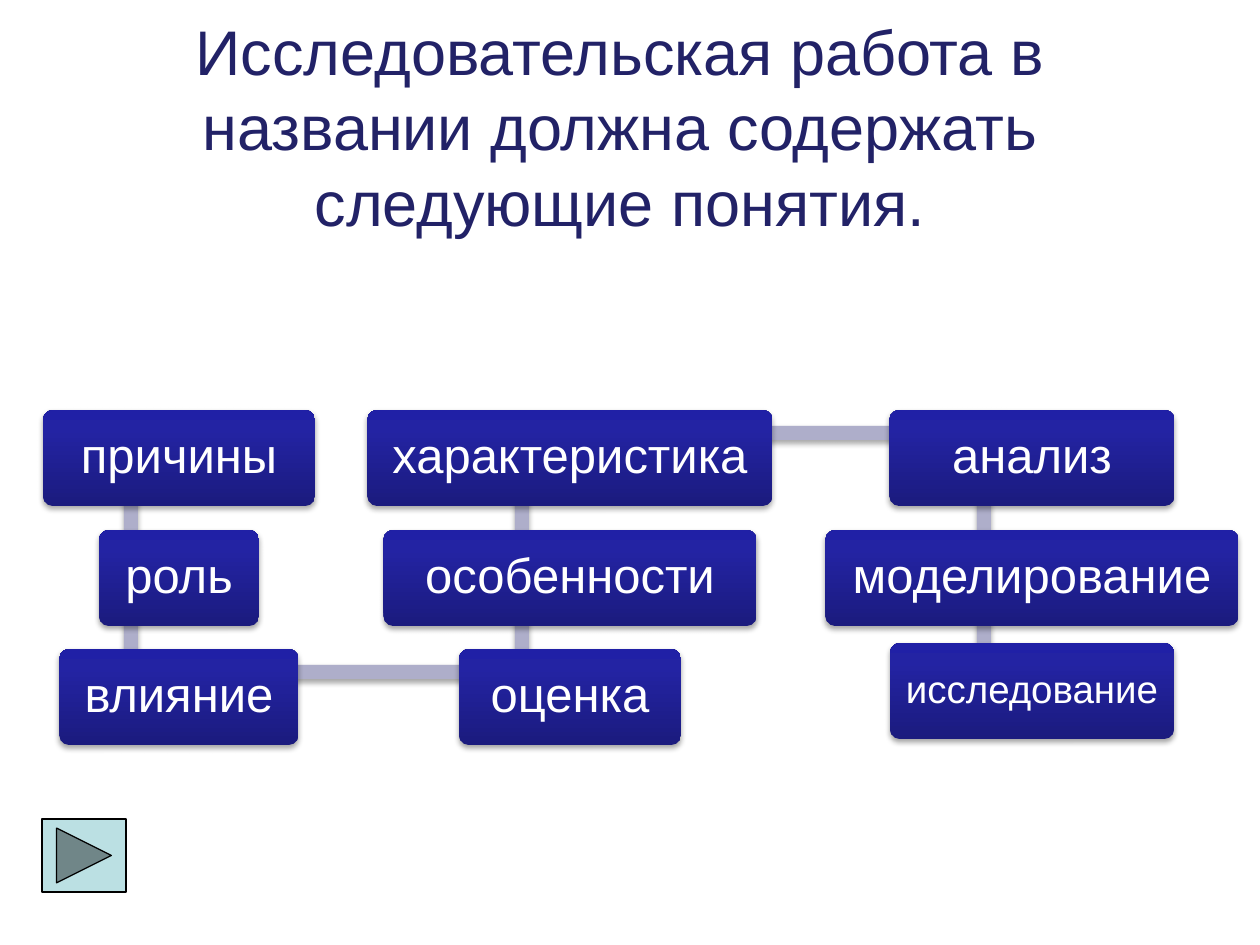
import copy
import itertools

import pptx
import pptx.dml.color
import pptx.enum.shapes
import pptx.enum.text
import pptx.oxml
import pptx.oxml.ns
import pptx.util

SHAPE = pptx.enum.shapes.MSO_SHAPE
EMU_PER_PX = 914400 / 126
SHADOW = (
    '<a:outerShdw %s blurRad="40000" dist="23000" dir="5400000" rotWithShape="0">'
    '<a:srgbClr val="000000"><a:alpha val="35000"/></a:srgbClr></a:outerShdw>'
    % pptx.oxml.ns.nsdecls("a")
)

ROW_TOPS = (410, 530, 649)
BOX_HEIGHT = 96
BAR = 14
BAR_DROP = 23  # from the top of a box to the joint of its bars
# centre of the boxes, x of the bars, then (word, width) from top to bottom
COLUMNS = (
    (179, 131, (("причины", 272), ("роль", 160), ("влияние", 239))),
    (570, 522, (("характеристика", 405), ("особенности", 373), ("оценка", 222))),
    (1032, 984, (("анализ", 285), ("моделирование", 413), ("исследование", 284))),
)


def px(n):
    return pptx.util.Emu(round(n * EMU_PER_PX))


def rgb(value):
    return pptx.dml.color.RGBColor.from_string(value)


class Deck:
    font = "Arial"
    title_color = "222267"
    box_stops = ((0, "1B1B7E"), (0.8, "2323A3"), (1, "2020A6"))
    bar_color = "AEAECA"

    def __init__(self, width, height):
        self.prs = pptx.Presentation()
        self.prs.slide_width, self.prs.slide_height = px(width), px(height)
        self.s = self.prs.slides.add_slide(self.prs.slide_layouts[6])

    def shape(self, kind, x, y, w, h):
        """Add a preset shape with neither shadow nor line."""
        sp = self.s.shapes.add_shape(kind, px(x), px(y), px(w), px(h))
        sp.shadow.inherit = False
        sp.line.fill.background()
        return sp

    def add_text(self, sp, text, size, color):
        tf = sp.text_frame
        tf.vertical_anchor = pptx.enum.text.MSO_ANCHOR.MIDDLE
        p = tf.paragraphs[0]
        p.alignment = pptx.enum.text.PP_ALIGN.CENTER
        r = p.add_run()
        r.text = text
        r.font.name = self.font
        r.font.size = pptx.util.Pt(size)
        r.font.color.rgb = rgb(color)
        return tf

    def drop_shadow(self, sp):
        effects = sp._element.spPr.find(pptx.oxml.ns.qn("a:effectLst"))
        effects.append(pptx.oxml.parse_xml(SHADOW))

    def title(self, text, x, y, w, h):
        sp = self.s.shapes.add_textbox(px(x), px(y), px(w), px(h))
        self.add_text(sp, text, 36, self.title_color).word_wrap = True

    def bar(self, start, end):
        """Join two points on one row or one column."""
        (x1, x2), (y1, y2) = (sorted(pair) for pair in zip(start, end))
        if x1 == x2:
            rect = x1 - BAR // 2, y1, BAR, y2 - y1
        else:
            rect = x1, y1 - BAR // 2, x2 - x1, BAR
        sp = self.shape(SHAPE.RECTANGLE, *rect)
        sp.fill.solid()
        sp.fill.fore_color.rgb = rgb(self.bar_color)
        self.drop_shadow(sp)

    def box(self, text, x, y, w, size):
        sp = self.shape(SHAPE.ROUNDED_RECTANGLE, x, y, w, BOX_HEIGHT)
        sp.adjustments[0] = 0.1
        sp.fill.gradient()
        sp.fill.gradient_angle = 90
        stops = sp._element.spPr.find(".//" + pptx.oxml.ns.qn("a:gsLst"))
        stops.append(copy.deepcopy(stops[0]))
        for stop, (position, color) in zip(sp.fill.gradient_stops, self.box_stops):
            stop.position = position
            stop.color.rgb = rgb(color)
        self.drop_shadow(sp)
        tf = self.add_text(sp, text, size, "FFFFFF")
        tf.word_wrap = False
        tf.paragraphs[0].line_spacing = 0.9

    def next_button(self, x, y, w, h):
        sp = self.shape(SHAPE.ACTION_BUTTON_FORWARD_OR_NEXT, x, y, w, h)
        sp.fill.solid()
        sp.fill.fore_color.rgb = rgb("BBE0E3")
        sp.line.color.rgb = rgb("000000")
        sp.line.width = pptx.util.Pt(0.75)


def main():
    deck = Deck(1260, 945)
    deck.title(
        "Исследовательская работа в названии должна содержать следующие понятия.",
        53, 73, 1134, 105,
    )

    boxes, joints = [], []
    for i, (center, bar_x, words) in enumerate(COLUMNS):
        column = []
        for (word, width), top in zip(words, ROW_TOPS):
            size = 28
            if word == "исследование":
                size, top = 22, top - 6
            boxes.append((word, center - width / 2, top, width, size))
            column.append((bar_x, top + BAR_DROP))
        # the chain runs down, up, then down again
        joints += column[::-1] if i % 2 else column

    for start, end in itertools.pairwise(joints):
        deck.bar(start, end)
    for box in boxes:
        deck.box(*box)

    deck.next_button(42, 819, 84, 73)
    deck.prs.save("out.pptx")


if __name__ == "__main__":
    main()
